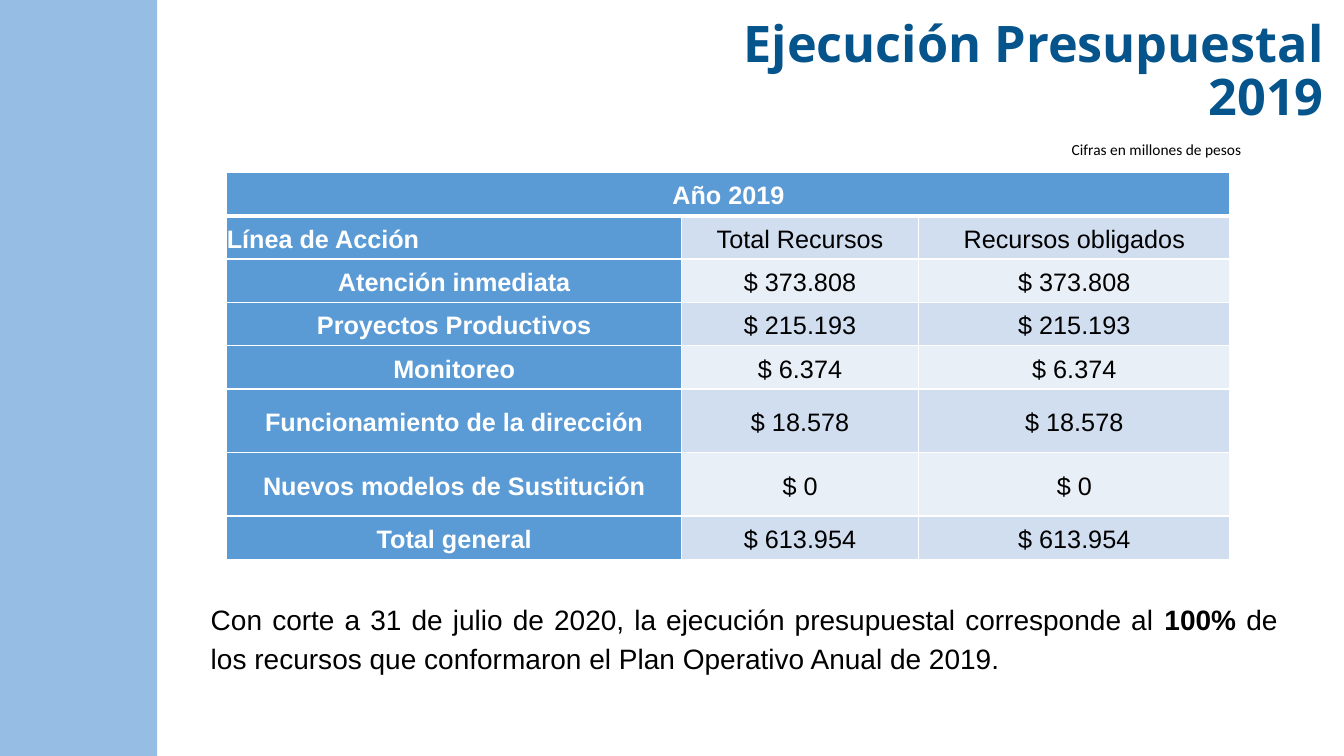
from lxml.etree import SubElement
from pptx import Presentation
from pptx.dml.color import RGBColor
from pptx.enum.shapes import MSO_SHAPE
from pptx.enum.text import MSO_ANCHOR, PP_ALIGN
from pptx.oxml.ns import qn
from pptx.util import Inches, Pt

WHITE, BLACK, BLUE = "FFFFFF", "000000", "5B9BD5"
BANDS = "D0DEEF", "E9EFF7"
COLS = 4.51, 2.35, 3.09
ROWS = [0.43] * 5 + [0.63] * 2 + [0.43]
BUDGET = [
    ("Año 2019", "", ""),
    ("Línea de Acción", "Total Recursos", "Recursos obligados"),
    ("Atención inmediata", "$ 373.808", "$ 373.808"),
    ("Proyectos Productivos", "$ 215.193", "$ 215.193"),
    ("Monitoreo", "$ 6.374", "$ 6.374"),
    ("Funcionamiento de la dirección", "$ 18.578", "$ 18.578"),
    ("Nuevos modelos de Sustitución", "$ 0", "$ 0"),
    ("Total general", "$ 613.954", "$ 613.954"),
]


def paint(fill, color):
    """Make a fill solid in a hex colour."""
    fill.solid()
    fill.fore_color.rgb = RGBColor.from_string(color)


def write(frame, runs, size, face, color, align=PP_ALIGN.LEFT, space=1.0):
    """Write (text, bold) runs into the first paragraph of a frame."""
    para = frame.paragraphs[0]
    para.alignment = align
    para.line_spacing = space
    for text, bold in runs:
        run = para.add_run()
        run.text = text
        run.font.size = Pt(size)
        run.font.name = face
        run.font.bold = bold
        run.font.color.rgb = RGBColor.from_string(color)


def inset(frame, wrap=True):
    """Set the margins, anchor and wrapping of a text frame."""
    frame.margin_left = frame.margin_right = Inches(0.05)
    frame.margin_top = frame.margin_bottom = Inches(0.05)
    frame.vertical_anchor = MSO_ANCHOR.TOP
    frame.word_wrap = wrap
    return frame


def add_bar(slide, box, color):
    """Add a plain filled rectangle."""
    bar = slide.shapes.add_shape(MSO_SHAPE.RECTANGLE, *map(Inches, box))
    bar.shadow.inherit = False
    paint(bar.fill, color)
    bar.line.fill.background()


def set_title(slide, box, text):
    """Place and format the title placeholder."""
    title = slide.shapes.title
    title.left, title.top, title.width, title.height = map(Inches, box)
    write(inset(title.text_frame), [(text, True)], 36, "Open Sans", "05548B",
          PP_ALIGN.RIGHT, 0.88)


def add_text(slide, box, runs, size, face, wrap=True, **style):
    """Add a black text box."""
    shape = slide.shapes.add_textbox(*map(Inches, box))
    write(inset(shape.text_frame, wrap), runs, size, face, BLACK, **style)


def edge(cell, base):
    """Give a cell white borders, with its own bottom width."""
    props = cell._tc.get_or_add_tcPr()
    for side, width in zip("LRTB", (1, 1, 1, base)):
        line = SubElement(props, qn(f"a:ln{side}"), w=str(Pt(width)))
        fill = SubElement(line, qn("a:solidFill"))
        SubElement(fill, qn("a:srgbClr"), val=WHITE)


def add_budget(slide, left, top):
    """Add the budget table with its banded rows."""
    frame = slide.shapes.add_table(
        len(ROWS), len(COLS), Inches(left), Inches(top),
        Inches(sum(COLS)), Inches(sum(ROWS)))
    table = frame.table
    for col, width in zip(table.columns, COLS):
        col.width = Inches(width)
    for row, height in zip(table.rows, ROWS):
        row.height = Inches(height)
    table.cell(0, 0).merge(table.cell(0, 2))
    for r, texts in enumerate(BUDGET):
        for c, text in enumerate(texts):
            cell = table.cell(r, c)
            head = r == 0 or c == 0
            cell.margin_left = cell.margin_right = 0
            cell.margin_top = cell.margin_bottom = 0
            cell.vertical_anchor = MSO_ANCHOR.MIDDLE
            edge(cell, 3 if r == 0 else 1)
            paint(cell.fill, BLUE if head else BANDS[(r - 1) % 2])
            if text:
                align = PP_ALIGN.LEFT if (r, c) == (1, 0) else PP_ALIGN.CENTER
                write(cell.text_frame, [(text, head)], 18, "Arial",
                      WHITE if head else BLACK, align, 1.15)


def main():
    """Build the slide and save it."""
    deck = Presentation()
    deck.slide_width, deck.slide_height = Inches(13.33), Inches(7.5)
    slide = deck.slides.add_slide(deck.slide_layouts[5])
    add_bar(slide, (0, 0, 1.56, 7.5), "96BDE3")
    set_title(slide, (6.42, 0.15, 6.76, 1.29), "Ejecución Presupuestal 2019")
    add_text(slide, (2.04, 5.88, 10.68, 0.84), [
        ("Con corte a 31 de julio de 2020, la ejecución presupuestal "
         "corresponde al ", False),
        ("100%", True),
        (" de los recursos que conformaron el Plan Operativo Anual de 2019.",
         False),
    ], 20, "Arial", align=PP_ALIGN.JUSTIFY, space=1.15)
    add_budget(slide, 2.25, 1.71)
    add_text(slide, (10.58, 1.34, 1.83, 0.25),
             [("Cifras en millones de pesos", False)], 11, "Calibri", False)
    deck.save("out.pptx")


if __name__ == "__main__":
    main()
